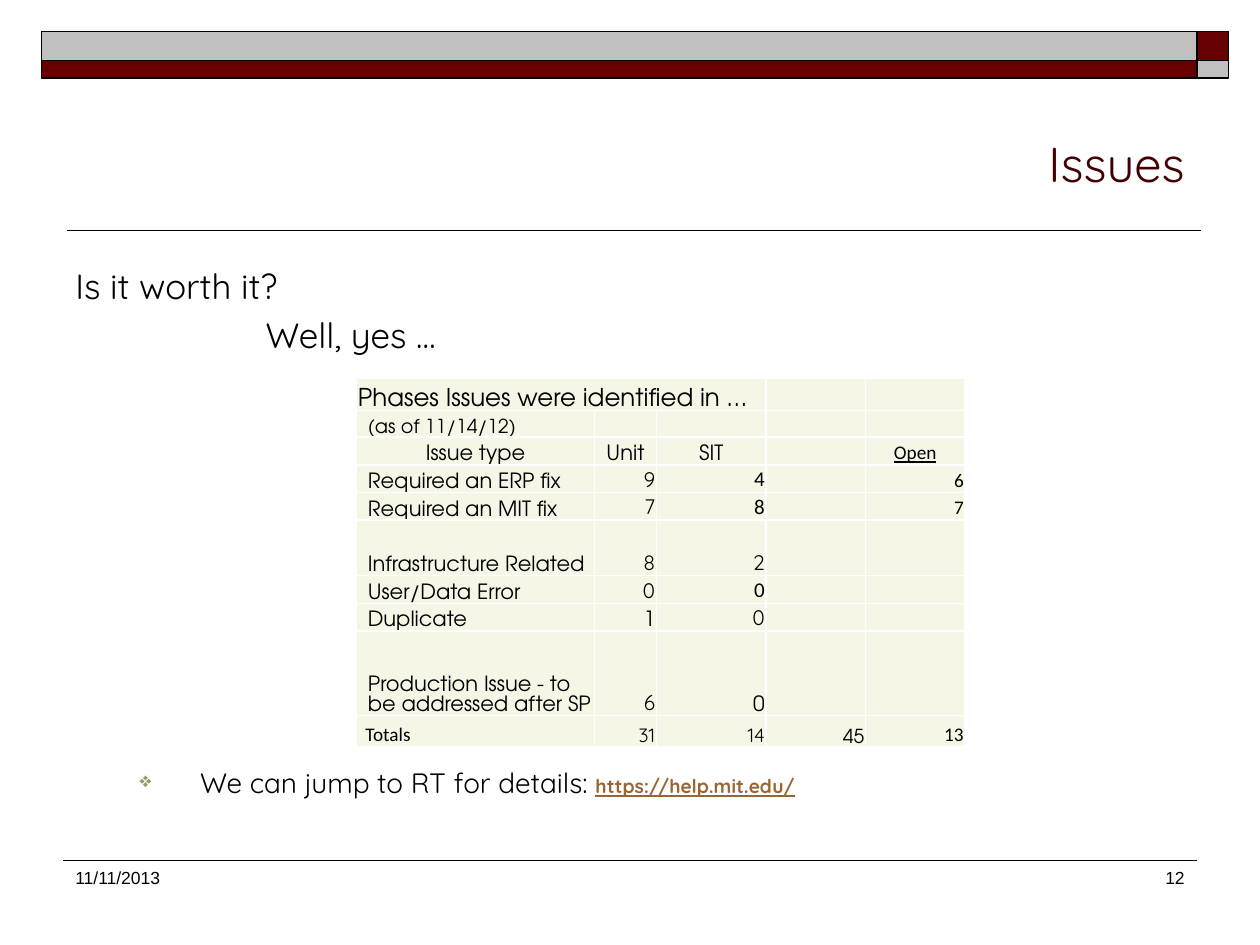
from lxml.etree import SubElement
from pptx import Presentation
from pptx.dml.color import RGBColor
from pptx.enum.shapes import MSO_CONNECTOR, MSO_SHAPE
from pptx.enum.text import MSO_ANCHOR, PP_ALIGN
from pptx.oxml.ns import qn
from pptx.util import Inches, Pt

QUICK, GYRE, CAL = "Quicksand", "TeX Gyre Adventor", "Calibri"
LEFT, MID, RIGHT = PP_ALIGN.LEFT, PP_ALIGN.CENTER, PP_ALIGN.RIGHT
rgb = RGBColor.from_string


def add_run(para, text, font, size, color="000000"):
    run = para.add_run()
    run.text = text
    run.font.name = font
    run.font.size = Pt(size)
    run.font.color.rgb = rgb(color)
    return run


def add_box(x, y, w, h):
    """Add a wrapping text box and return its text frame."""
    frame = slide.shapes.add_textbox(Inches(x), Inches(y), Inches(w), Inches(h)).text_frame
    frame.word_wrap = True
    return frame


prs = Presentation()
prs.slide_width, prs.slide_height = Inches(10), Inches(7.5)
slide = prs.slides.add_slide(prs.slide_layouts[6])

# Rules under the title and above the footer
for x1, x2, y, width in [(9.53, 0.53, 1.83, 1), (0.5, 9.5, 6.83, 0.75)]:
    rule = slide.shapes.add_connector(
        MSO_CONNECTOR.STRAIGHT, Inches(x1), Inches(y), Inches(x2), Inches(y))
    rule.line.color.rgb = rgb("000000")
    rule.line.width = Pt(width)
    SubElement(rule._element.spPr, qn("a:effectLst"))

# Checkered band along the top
for x, y, w, h, color in [
    (9.5, 0.25, 0.25, 0.23, "660000"),
    (0.33, 0.25, 9.17, 0.23, "C0C0C0"),
    (0.33, 0.48, 9.17, 0.14, "660000"),
    (9.5, 0.48, 0.25, 0.14, "C0C0C0"),
]:
    bar = slide.shapes.add_shape(
        MSO_SHAPE.RECTANGLE, Inches(x), Inches(y), Inches(w), Inches(h))
    bar.shadow.inherit = False
    bar.fill.solid()
    bar.fill.fore_color.rgb = rgb(color)
    bar.line.color.rgb = rgb("000000")
    bar.line.width = Pt(1)

# Title and footer
title = add_box(0.5, 0.58, 9, 1)
title.vertical_anchor = MSO_ANCHOR.BOTTOM
title.paragraphs[0].alignment = RIGHT
add_run(title.paragraphs[0], "Issues", QUICK, 28, "420000")

for x, w, text, align in [(0.5, 1.83, "11/11/2013", LEFT), (7.42, 2.08, "12", RIGHT)]:
    para = add_box(x, 6.83, w, 0.5).paragraphs[0]
    para.alignment = align
    add_run(para, text, "Arial", 10)

# Question and answer
intro = add_box(0.5, 2.05, 9, 0.85)
add_run(intro.paragraphs[0], "Is it worth it?", QUICK, 20)
reply = intro.add_paragraph()
reply.space_before = Pt(4)
reply._p.get_or_add_pPr().set("marL", str(Inches(1.51)))
add_run(reply, "Well, yes …", QUICK, 20)

# Issue counts: (text, font, size) for each filled cell
rows = [
    [("Phases Issues were identified in …", GYRE, 14)],
    [("(as of 11/14/12)", GYRE, 11)],
    [("Issue type", GYRE, 12), ("Unit", GYRE, 12), ("SIT", GYRE, 12), None, ("Open", CAL, 11)],
    [("Required an ERP fix", GYRE, 12), ("9", QUICK, 12), ("4", CAL, 12), None, ("6", CAL, 11)],
    [("Required an MIT fix", GYRE, 12), ("7", QUICK, 12), ("8", CAL, 12), None, ("7", CAL, 11)],
    [("Infrastructure Related", GYRE, 12), ("8", QUICK, 12), ("2", QUICK, 12)],
    [("User/Data Error", GYRE, 12), ("0", QUICK, 12), ("0", CAL, 12)],
    [("Duplicate", GYRE, 12), ("1", GYRE, 12), ("0", QUICK, 12)],
    [("Production Issue - to be addressed after SP", GYRE, 12), ("6", QUICK, 12), ("0", GYRE, 12)],
    [("Totals", CAL, 11), ("31", QUICK, 11), ("14", QUICK, 11), ("45", GYRE, 11), ("13", CAL, 11)],
]
widths = [1.89, 0.49, 0.87, 0.79, 0.79]
heights = [0.26, 0.21, 0.22, 0.22, 0.22, 0.44, 0.22, 0.22, 0.67, 0.25]
HEAD, TOTAL = 2, len(rows) - 1

table = slide.shapes.add_table(
    len(rows), len(widths), Inches(2.83), Inches(3), Inches(4.83), Inches(2.92)).table
for col, width in zip(table.columns, widths):
    col.width = Inches(width)
for row, height in zip(table.rows, heights):
    row.height = Inches(height)
table.cell(0, 0).merge(table.cell(0, 2))

for r, items in enumerate(rows):
    for c in range(len(widths)):
        cell = table.cell(r, c)
        cell.vertical_anchor = MSO_ANCHOR.BOTTOM
        cell.margin_left = cell.margin_right = cell.margin_top = Inches(0.01)
        cell.margin_bottom = 0
        para = cell.text_frame.paragraphs[0]
        item = items[c] if c < len(items) else None
        if item:
            run = add_run(para, *item)
            run.font.underline = r == HEAD
            para.alignment = MID if r == HEAD else RIGHT if c else LEFT
            if c == 0 and r not in (0, HEAD):
                cell.margin_left = Inches(0.07 if r == TOTAL else 0.09)
        else:
            SubElement(para._p, qn("a:endParaRPr"), sz="800")
        props = cell._tc.get_or_add_tcPr()
        for side in ("a:lnL", "a:lnR", "a:lnT", "a:lnB"):
            edge = SubElement(props, qn(side), w=str(Pt(1)))
            SubElement(SubElement(edge, qn("a:solidFill")), qn("a:srgbClr"), val="FFFFFF")
        cell.fill.solid()
        cell.fill.fore_color.rgb = rgb("F6F6E7")

# Bulleted pointer below the table
note = add_box(0.5, 6.03, 9, 0.4).paragraphs[0]
props = note._p.get_or_add_pPr()
props.set("marL", str(Inches(0.99)))
props.set("indent", str(Inches(-0.48)))
SubElement(SubElement(props, qn("a:buClr")), qn("a:srgbClr"), val="999966")
SubElement(props, qn("a:buSzPct"), val="75000")
SubElement(props, qn("a:buChar"), char="❖")
add_run(note, "We can jump to RT for details: ", QUICK, 16)
site = add_run(note, "https://help.mit.edu/", QUICK, 11, "996633")
site.font.bold = site.font.underline = True

prs.save("out.pptx")
